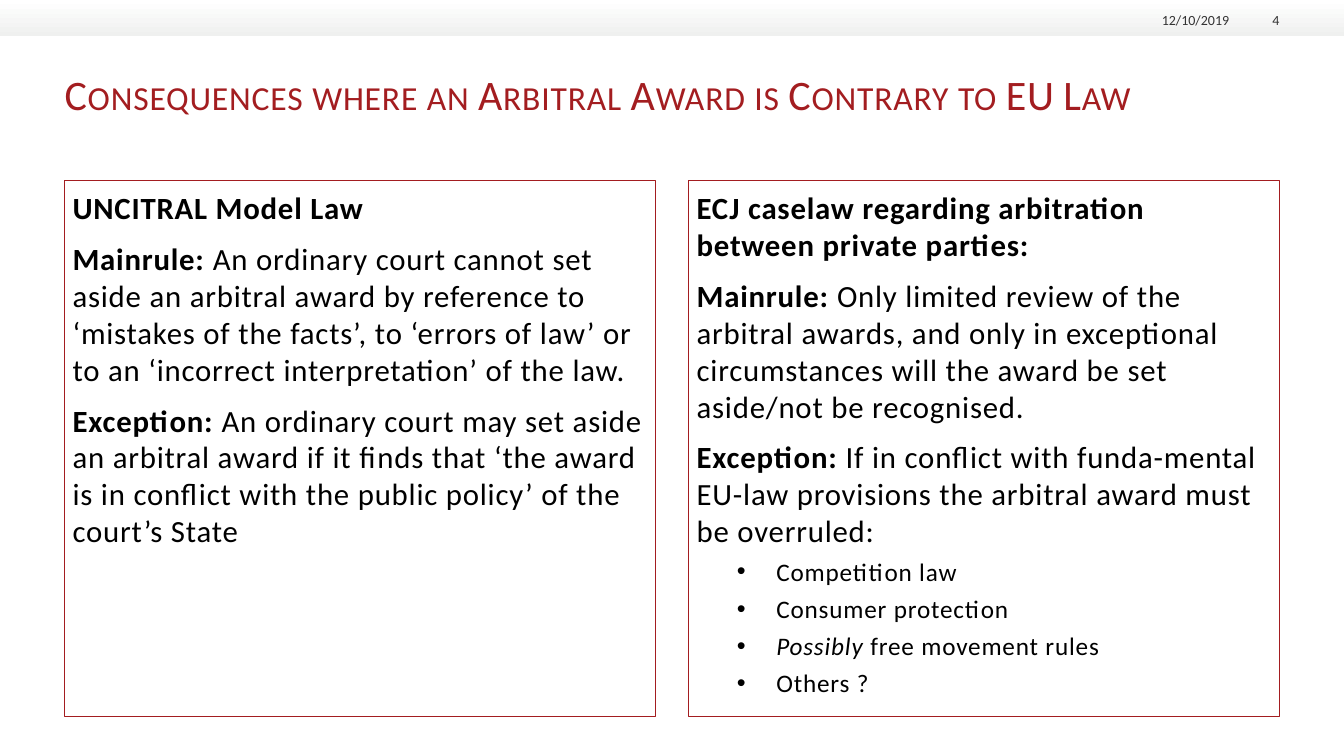
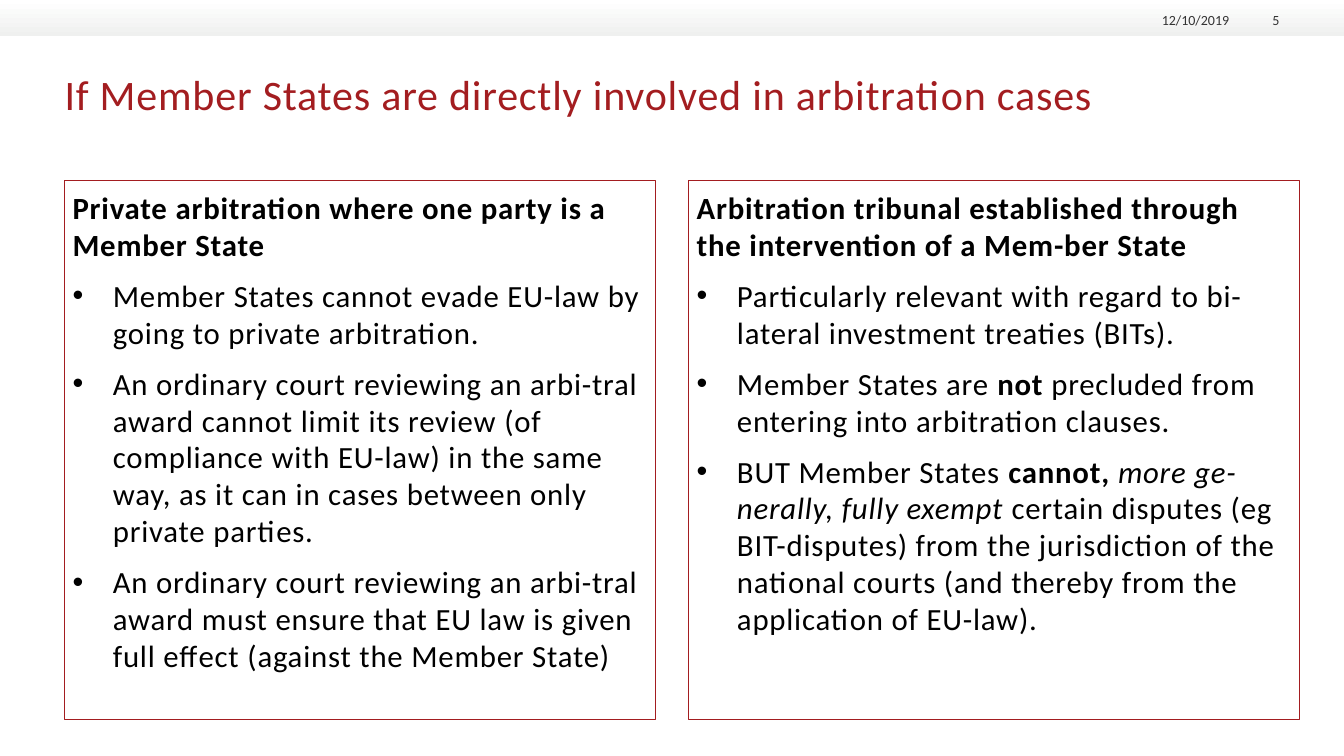
from lxml import etree
from pptx import Presentation
from pptx.dml.color import RGBColor
from pptx.enum.shapes import MSO_SHAPE
from pptx.enum.text import MSO_ANCHOR, PP_ALIGN
from pptx.oxml.ns import qn
from pptx.util import Inches, Pt

RECTANGLE = MSO_SHAPE.RECTANGLE
TOP, BOTTOM = MSO_ANCHOR.TOP, MSO_ANCHOR.BOTTOM
LEFT, RIGHT = PP_ALIGN.LEFT, PP_ALIGN.RIGHT

RED = RGBColor(0xA3, 0x1D, 0x20)
BLACK = RGBColor(0, 0, 0)
GREY = RGBColor(0x33, 0x33, 0x33)
WHITE = RGBColor(0xFF, 0xFF, 0xFF)
BAND_GREY = RGBColor(0xEF, 0xF0, 0xEF)

FONT = "Calibri"
SLIDE_WIDTH, SLIDE_HEIGHT = 13.33, 7.5
MARGIN = 0.64
PANEL_TOP, PANEL_WIDTH, PANEL_GAP = 1.79, 5.86, 0.33
DATE = "12/10/2019"

# Paragraph kinds: size, space before, left margin, hanging indent
KINDS = {
    "plain": (22, 10, 0, 0),
    "bullet": (22, 10, 0.4, 0.4),
    "sub": (18, 5, 0.79, 0.39),
}


class Deck:
    """Holds the shared style and the current slide."""

    def __init__(self):
        self.presentation = Presentation()
        self.presentation.slide_width = Inches(SLIDE_WIDTH)
        self.presentation.slide_height = Inches(SLIDE_HEIGHT)
        self.slide = None

    def new_slide(self, number, title, small_caps=False):
        layout = self.presentation.slide_layouts[6]
        self.slide = self.presentation.slides.add_slide(layout)
        self.band()
        self.label(MARGIN, 0.68, 12.04, 0.95, title, 30, RED,
                   spaced=True, small_caps=small_caps)
        for left, width, text in ((11.3, 0.89, DATE), (12.27, 0.42, str(number))):
            self.label(left, 0.09, width, 0.19, text, 10, GREY, RIGHT, BOTTOM)

    def rectangle(self, left, top, width, height):
        shape = self.slide.shapes.add_shape(
            RECTANGLE, Inches(left), Inches(top), Inches(width), Inches(height))
        shape.shadow.inherit = False
        return shape

    def band(self):
        shape = self.rectangle(0, 0, SLIDE_WIDTH, 0.36)
        shape.line.fill.background()
        shape.fill.gradient()
        shape.fill.gradient_angle = 270
        for stop, color in zip(shape.fill.gradient_stops, (WHITE, BAND_GREY)):
            stop.color.rgb = color

    def frame(self, shape, inset, anchor):
        frame = shape.text_frame
        frame.word_wrap = True
        frame.vertical_anchor = anchor
        frame.margin_left = frame.margin_right = Inches(inset)
        frame.margin_top = frame.margin_bottom = Inches(inset)
        return frame

    def run(self, paragraph, text, size, color, style="", spaced=False, small_caps=False):
        run = paragraph.add_run()
        run.text = text
        font = run.font
        font.name, font.size = FONT, Pt(size)
        font.color.rgb = color
        font.bold, font.italic = style == "bold", style == "italic"
        properties = run._r.get_or_add_rPr()
        if spaced:
            properties.set("spc", "60")
        if small_caps:
            properties.set("cap", "small")

    def label(self, left, top, width, height, text, size, color,
              align=LEFT, anchor=TOP, **style):
        box = self.slide.shapes.add_textbox(
            Inches(left), Inches(top), Inches(width), Inches(height))
        paragraph = self.frame(box, 0, anchor).paragraphs[0]
        paragraph.alignment = align
        self.run(paragraph, text, size, color, **style)

    def bullet(self, paragraph, margin, hanging):
        properties = paragraph._p.get_or_add_pPr()
        properties.set("marL", str(Inches(margin)))
        properties.set("indent", str(-Inches(hanging)))
        font = etree.SubElement(properties, qn("a:buFont"))
        font.set("typeface", "Arial")
        etree.SubElement(properties, qn("a:buChar")).set("char", "•")

    def panel(self, column, height, paragraphs, width=PANEL_WIDTH):
        left = MARGIN + column * (PANEL_WIDTH + PANEL_GAP)
        shape = self.rectangle(left, PANEL_TOP, width, height)
        shape.fill.background()
        shape.line.color.rgb = RED
        shape.line.width = Pt(0.75)
        frame = self.frame(shape, 0.08, TOP)
        for index, (kind, *runs) in enumerate(paragraphs):
            paragraph = frame.add_paragraph() if index else frame.paragraphs[0]
            size, space, margin, hanging = KINDS[kind]
            if hanging:
                self.bullet(paragraph, margin, hanging)
            paragraph.alignment = LEFT
            if index:
                paragraph.space_before = Pt(space)
            for text, style in runs:
                self.run(paragraph, text, size, BLACK, style, spaced=True)


def main():
    deck = Deck()

    # Awards contrary to EU law
    deck.new_slide(4, "Consequences where an Arbitral Award is Contrary to EU Law",
                   small_caps=True)
    deck.panel(0, 5.32, [
        ("plain", ("UNCITRAL Model Law", "bold")),
        ("plain", ("Mainrule: ", "bold"),
         ("An ordinary court cannot set aside an arbitral award by reference to "
          "‘mistakes of the facts’, to ‘errors of law’ or to an ‘incorrect "
          "interpretation’ of the law.", "")),
        ("plain", ("Exception: ", "bold"),
         ("An ordinary court may set aside an arbitral award if it finds that ‘the "
          "award is in conflict with the public policy’ of the court’s State", "")),
    ])
    deck.panel(1, 5.32, [
        ("plain", ("ECJ caselaw regarding arbitration between private parties:", "bold")),
        ("plain", ("Mainrule: ", "bold"),
         ("Only limited review of the arbitral awards, and only in exceptional "
          "circumstances will the award be set aside/not be recognised.", "")),
        ("plain", ("Exception: ", "bold"),
         ("If in conflict with funda-mental EU-law provisions the arbitral award "
          "must be overruled:", "")),
        ("sub", ("Competition law", "")),
        ("sub", ("Consumer protection", "")),
        ("sub", ("Possibly", "italic"), (" free movement rules", "")),
        ("sub", ("Others ?", "")),
    ])

    # Member States as parties
    deck.new_slide(5, "If Member States are directly involved in arbitration cases")
    deck.panel(0, 5.35, [
        ("plain", ("Private arbitration where one party is a Member State", "bold")),
        ("bullet", ("Member States cannot evade EU-law by going to private "
                    "arbitration.", "")),
        ("bullet", ("An ordinary court reviewing an arbi-tral award cannot limit its "
                    "review (of compliance with EU-law) in the same way, as it can in "
                    "cases between only private parties.", "")),
        ("bullet", ("An ordinary court reviewing an arbi-tral award must ensure that "
                    "EU law is given full effect (against the Member State)", "")),
    ])
    deck.panel(1, 5.35, [
        ("plain", ("Arbitration tribunal established through the intervention of a "
                   "Mem-ber State", "bold")),
        ("bullet", ("Particularly relevant with regard to bi-lateral investment "
                    "treaties (BITs).", "")),
        ("bullet", ("Member States are ", ""), ("not", "bold"),
         (" precluded from entering into arbitration clauses.", "")),
        ("bullet", ("BUT Member States ", ""), ("cannot, ", "bold"),
         ("more ge-nerally, fully exempt ", "italic"),
         ("certain disputes (eg BIT-disputes) from the jurisdiction of the national "
          "courts (and thereby from the application of EU-law).", "")),
    ], width=6.06)

    deck.presentation.save("out.pptx")


if __name__ == "__main__":
    main()
